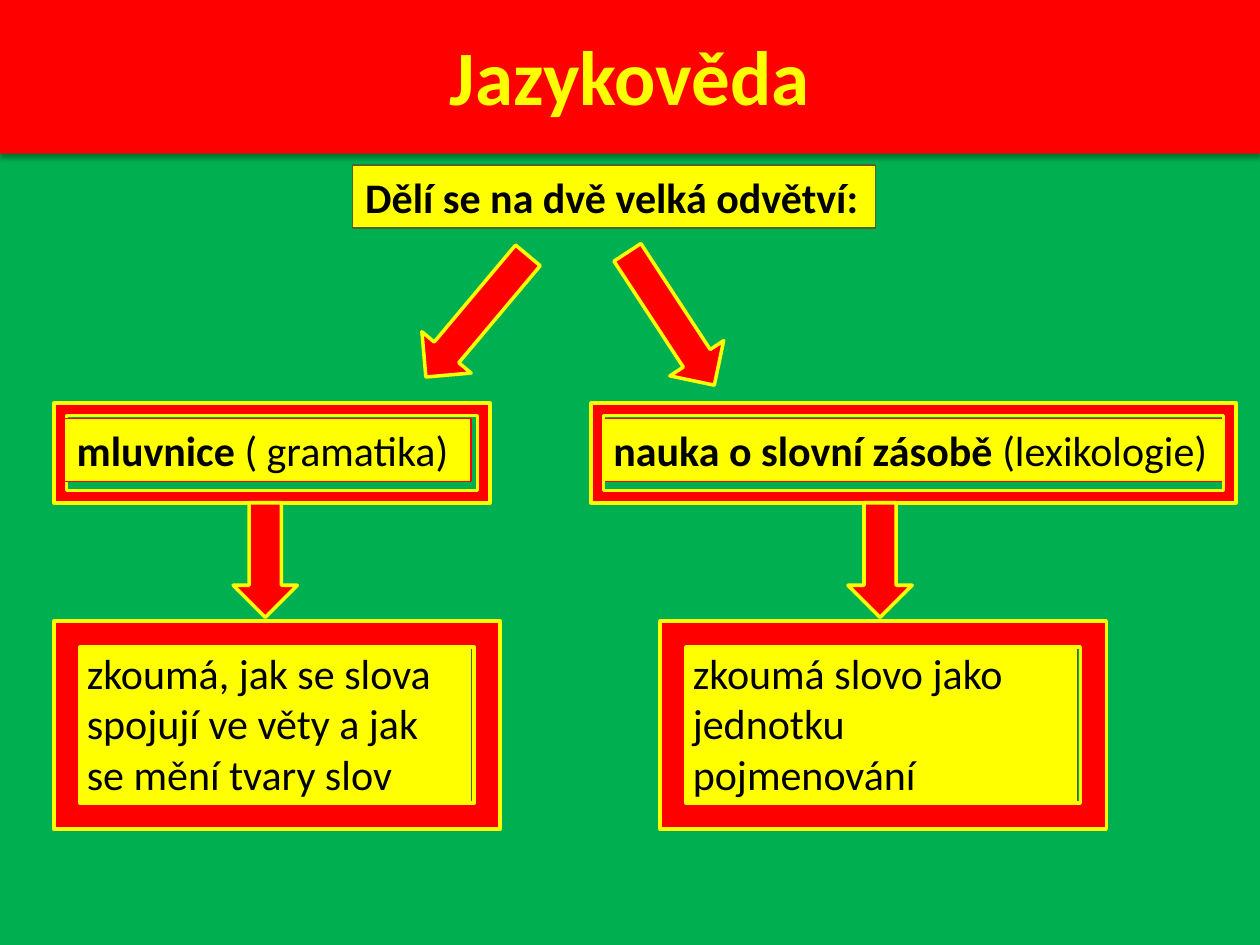
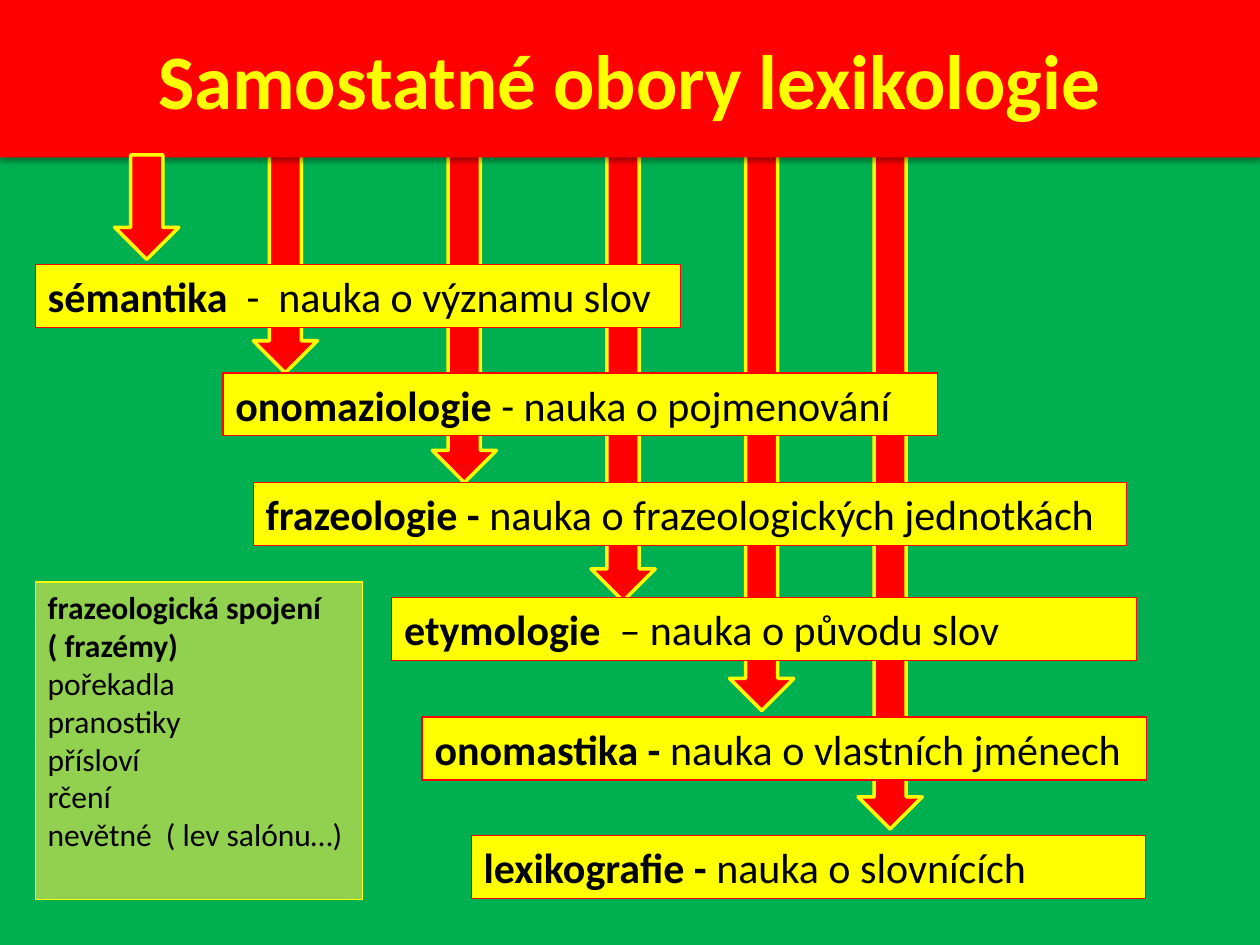
import pptx
import pptx.dml.color
import pptx.enum.shapes
import pptx.enum.text
import pptx.oxml
import pptx.oxml.ns
import pptx.util

Inches = pptx.util.Inches
Pt = pptx.util.Pt
SHAPES = pptx.enum.shapes.MSO_SHAPE
ALIGN = pptx.enum.text.PP_ALIGN
ANCHOR = pptx.enum.text.MSO_ANCHOR

COLORS = {
    "background": "00B050",
    "red": "FF0000",
    "yellow": "FFFF00",
    "olive": "4F6228",
    "lime": "92D050",
    "black": "000000",
}
FONT = "Calibri"
TITLE_HEIGHT = 1.25
LABEL_HEIGHT = 0.5
ARROW_WIDTH = 0.51
ARROW_START = 1.23

DIVISION_TITLE = "Jazykověda"
DIVISION_INTRO = "Dělí se na dvě velká odvětví:"
BRANCHES = [
    {
        "name": [("mluvnice ", True), ("( gramatika)", False)],
        "name_box": (0.51, 3.32, 3.23, LABEL_HEIGHT),
        "name_frame": (0.43, 3.2, 3.46, 0.79),
        "name_wraps": True,
        "frame_in_front": False,
        "intro_arrow": (3.53, 1.88, 1.26, 40),
        "arrow_left": 1.85,
        "study": "zkoumá, jak se slova spojují ve věty a jak se mění tvary slov",
        "study_left": 0.43,
    },
    {
        "name": [("nauka o slovní zásobě ", True), ("(lexikologie)", False)],
        "name_box": (4.77, 3.32, 4.96, LABEL_HEIGHT),
        "name_frame": (4.69, 3.2, 5.12, 0.79),
        "name_wraps": False,
        "frame_in_front": True,
        "intro_arrow": (5.07, 1.9, 1.26, 326.8),
        "arrow_left": 6.73,
        "study": "zkoumá slovo jako jednotku pojmenování",
        "study_left": 5.24,
    },
]

FIELDS_TITLE = "Samostatné obory lexikologie"
# term, meaning, left, top, width, arrow left, arrow end
FIELDS = [
    ("sémantika  ", "-  nauka o významu slov", 0.28, 2.1, 5.12, 0.91, 2.06),
    ("onomaziologie ", "- nauka o pojmenování", 1.77, 2.96, 5.67, 2.01, 2.96),
    ("frazeologie - ", "nauka o frazeologických jednotkách", 2.01, 3.83, 6.93, 3.43, 3.83),
    ("etymologie  ", "– nauka o původu slov", 3.11, 4.74, 5.91, 4.69, 4.77),
    ("onomastika - ", "nauka o vlastních jménech", 3.35, 5.69, 5.75, 5.79, 5.64),
    ("lexikografie - ", "nauka o slovnících", 3.74, 6.63, 5.35, 6.81, 6.58),
]
PHRASES = [
    ("frazeologická spojení", True),
    ("( frazémy)", True),
    ("pořekadla", False),
    ("pranostiky", False),
    ("přísloví", False),
    ("rčení", False),
    ("nevětné  ( lev salónu…)", False),
]


def color(name):
    return pptx.dml.color.RGBColor.from_string(COLORS[name])


def add_box(slide, kind, box, fill, line=None, line_width=0.75):
    shape = slide.shapes.add_shape(kind, *map(Inches, box))
    shape.shadow.inherit = False
    shape.fill.solid()
    shape.fill.fore_color.rgb = color(fill)
    if line:
        shape.line.color.rgb = color(line)
        shape.line.width = Pt(line_width)
    else:
        shape.line.fill.background()
    return shape


def write(shape, paragraphs, size, font_color="black", align=ALIGN.LEFT,
          anchor=ANCHOR.TOP, wrap=True):
    frame = shape.text_frame
    frame.word_wrap = wrap
    frame.vertical_anchor = anchor
    for index, runs in enumerate(paragraphs):
        paragraph = frame.add_paragraph() if index else frame.paragraphs[0]
        paragraph.alignment = align
        for text, bold in runs:
            run = paragraph.add_run()
            run.text = text
            formats = {"name": FONT, "size": Pt(size), "bold": bold}
            for attribute, value in formats.items():
                setattr(run.font, attribute, value)
            run.font.color.rgb = color(font_color)


def add_label(slide, box, runs, line="red", wrap=True):
    shape = add_box(slide, SHAPES.RECTANGLE, box, "yellow", line)
    write(shape, [runs], 24, wrap=wrap)


def add_arrow(slide, left, top, height, rotation=0):
    box = (left, top, ARROW_WIDTH, height)
    shape = add_box(slide, SHAPES.DOWN_ARROW, box, "red", "yellow", 2)
    shape.rotation = rotation


def add_frame(slide, box):
    add_box(slide, SHAPES.FRAME, box, "red", "yellow", 2)


def add_title(slide, text, top=0):
    shape = add_box(slide, SHAPES.RECTANGLE, (0, top, 10, TITLE_HEIGHT), "red")
    write(shape, [[(text, True)]], 44, "yellow", ALIGN.CENTER, ANCHOR.MIDDLE)
    effects = shape.element.spPr.find(pptx.oxml.ns.qn("a:effectLst"))
    effects.append(pptx.oxml.parse_xml(
        f'<a:outerShdw {pptx.oxml.ns.nsdecls("a")} blurRad="{Pt(3.1)}" '
        f'dist="{Pt(1.8)}" dir="5400000" rotWithShape="0">'
        f'<a:srgbClr val="{COLORS["black"]}"><a:alpha val="35000"/></a:srgbClr>'
        '</a:outerShdw>'))


def add_slide(presentation):
    slide = presentation.slides.add_slide(presentation.slide_layouts[6])
    slide.background.fill.solid()
    slide.background.fill.fore_color.rgb = color("background")
    return slide


def build_division(presentation):
    slide = add_slide(presentation)
    add_title(slide, DIVISION_TITLE, -0.03)
    add_label(slide, (2.8, 1.31, 4.15, LABEL_HEIGHT), [(DIVISION_INTRO, True)],
              "olive", wrap=False)
    for branch in BRANCHES:
        add_arrow(slide, *branch["intro_arrow"])
        if not branch["frame_in_front"]:
            add_frame(slide, branch["name_frame"])
        add_label(slide, branch["name_box"], branch["name"], wrap=branch["name_wraps"])
        if branch["frame_in_front"]:
            add_frame(slide, branch["name_frame"])
        left = branch["study_left"]
        add_label(slide, (left + 0.16, 5.09, 3.15, 1.31), [(branch["study"], False)], "olive")
        add_arrow(slide, branch["arrow_left"], 3.99, 0.91)
        add_frame(slide, (left, 4.93, 3.54, 1.65))


def build_fields(presentation):
    slide = add_slide(presentation)
    arrows = [(left, ARROW_START, end - ARROW_START) for *_, left, end in FIELDS]
    for arrow in arrows[1:]:
        add_arrow(slide, *arrow)
    add_title(slide, FIELDS_TITLE)
    for term, meaning, left, top, width, *_ in FIELDS:
        add_label(slide, (left, top, width, LABEL_HEIGHT), [(term, True), (meaning, False)])
    add_arrow(slide, *arrows[0])
    panel = add_box(slide, SHAPES.RECTANGLE, (0.28, 4.62, 2.6, 2.52), "lime", "yellow")
    write(panel, [[phrase] for phrase in PHRASES], 18)


def main():
    presentation = pptx.Presentation()
    presentation.slide_width = Inches(10)
    presentation.slide_height = Inches(7.5)
    build_division(presentation)
    build_fields(presentation)
    presentation.save("out.pptx")


if __name__ == "__main__":
    main()
